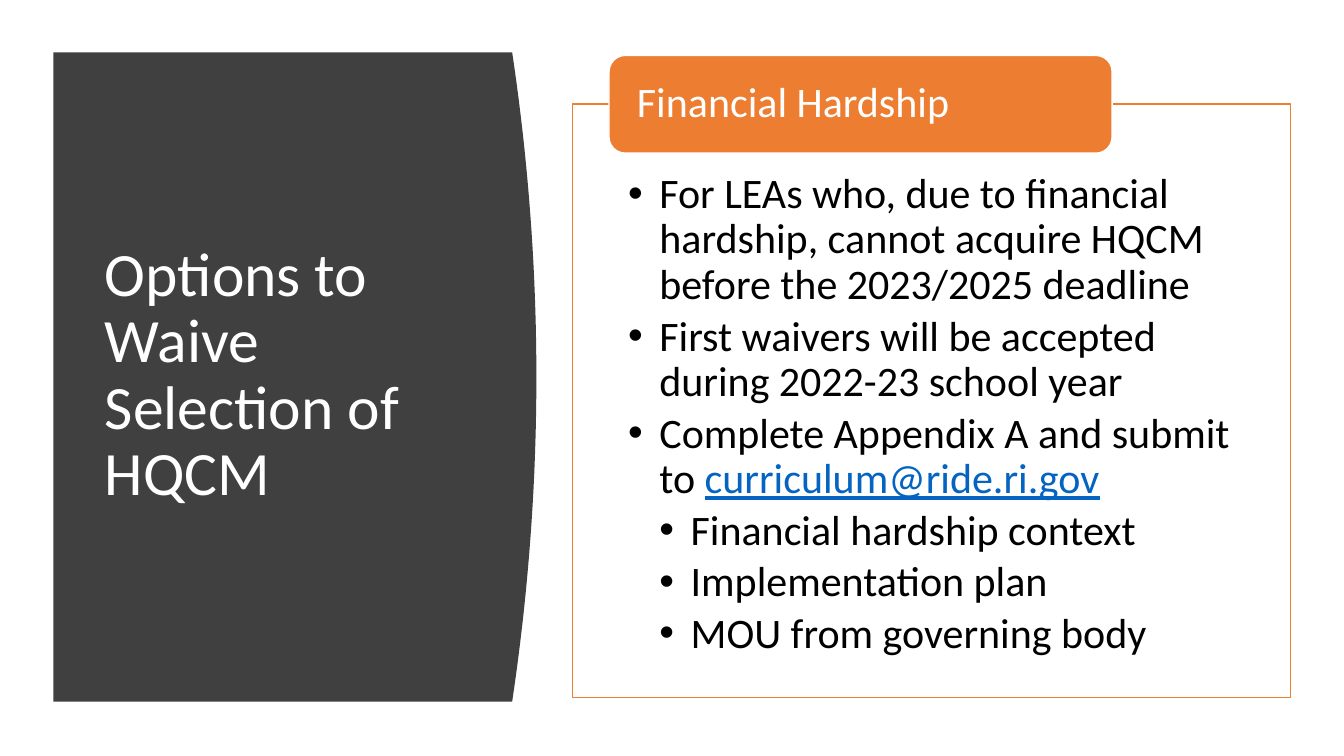
from dataclasses import dataclass

import pptx
import pptx.dml.color
import pptx.enum.shapes
import pptx.enum.text
import pptx.oxml
import pptx.oxml.ns
import pptx.util

PX = 9144
FONT = "Calibri"
COLORS = {
    "white": "FFFFFF",
    "dark": "404040",
    "orange": "ED7D31",
    "black": "000000",
    "link": "0563C1",
}
SHAPES = pptx.enum.shapes.MSO_SHAPE
ANCHOR = pptx.enum.text.MSO_ANCHOR
INDENT = 31


@dataclass(frozen=True)
class Box:
    left: int
    top: int
    width: int
    height: int


@dataclass(frozen=True)
class Run:
    text: str
    color: str = "black"
    underline: bool = False


@dataclass(frozen=True)
class Bullet:
    level: int
    runs: tuple[Run, ...]


PANEL = Box(568, 103, 712, 589)
HEADER = Box(604, 55, 499, 97)
TITLE = Box(94, 111, 374, 524)
CURVE = Box(53, 52, 479, 644)
BULGE = 24
CURVE_STEPS = 40

BULLETS = (
    Bullet(1, (Run("For LEAs who, due to financial hardship, cannot acquire HQCM "
                   "before the 2023/2025 deadline"),)),
    Bullet(1, (Run("First waivers will be accepted during 2022-23 school year"),)),
    Bullet(1, (Run("Complete Appendix A and submit to "),
               Run("curriculum@ride.ri.gov", "link", True))),
    Bullet(2, (Run("Financial hardship context"),)),
    Bullet(2, (Run("Implementation plan"),)),
    Bullet(2, (Run("MOU from governing body"),)),
)


def rgb(name: str) -> pptx.dml.color.RGBColor:
    return pptx.dml.color.RGBColor.from_string(COLORS[name])


def paint(sp, fill: str, line: str | None = None) -> None:
    sp.shadow.inherit = False
    sp.fill.solid()
    sp.fill.fore_color.rgb = rgb(fill)
    if line:
        sp.line.color.rgb = rgb(line)
        sp.line.width = pptx.util.Pt(1)
    else:
        sp.line.fill.background()


def add_box(slide, kind, box: Box, fill: str, line: str):
    sp = slide.shapes.add_shape(kind, box.left * PX, box.top * PX,
                                box.width * PX, box.height * PX)
    paint(sp, fill, line)
    return sp


def set_frame(tf, margins: tuple[int, int, int, int], anchor) -> None:
    tf.word_wrap = True
    tf.auto_size = pptx.enum.text.MSO_AUTO_SIZE.NONE
    tf.vertical_anchor = anchor
    tf.margin_left, tf.margin_top, tf.margin_right, tf.margin_bottom = (
        m * PX for m in margins)


def add_runs(p, runs: tuple[Run, ...], size: int) -> None:
    p.alignment = pptx.enum.text.PP_ALIGN.LEFT
    p.line_spacing = 0.9
    for run in runs:
        r = p.add_run()
        r.text = run.text
        r.font.name = FONT
        r.font.size = pptx.util.Pt(size)
        r.font.color.rgb = rgb(run.color)
        if run.underline:
            r.font.underline = True


def set_bullet(p, level: int) -> None:
    pPr = p._p.get_or_add_pPr()
    pPr.set("marL", str(level * INDENT * PX))
    pPr.set("indent", str(-INDENT * PX))
    ns = pptx.oxml.ns.nsdecls("a")
    pPr.append(pptx.oxml.parse_xml(f'<a:buFont {ns} typeface="Arial"/>'))
    pPr.append(pptx.oxml.parse_xml(f'<a:buChar {ns} char="•"/>'))


def add_curve(slide) -> None:
    edge = CURVE.left + CURVE.width
    points = []
    for i in range(CURVE_STEPS + 1):
        t = i / CURVE_STEPS
        x = edge - BULGE * (2 * t - 1) ** 2
        points.append((round(x * PX), round((CURVE.top + t * CURVE.height) * PX)))
    points.append((CURVE.left * PX, (CURVE.top + CURVE.height) * PX))
    builder = slide.shapes.build_freeform(CURVE.left * PX, CURVE.top * PX)
    builder.add_line_segments(points, close=True)
    sp = builder.convert_to_shape()
    paint(sp, "dark")
    slide.shapes._spTree.insert(2, sp._element)


def add_title(slide) -> None:
    sp = slide.shapes.title
    sp.left, sp.top = TITLE.left * PX, TITLE.top * PX
    sp.width, sp.height = TITLE.width * PX, TITLE.height * PX
    set_frame(sp.text_frame, (10, 5, 10, 5), ANCHOR.MIDDLE)
    add_runs(sp.text_frame.paragraphs[0],
             (Run("Options to Waive Selection of HQCM", "white"),), 44)


def add_panel(slide) -> None:
    sp = add_box(slide, SHAPES.RECTANGLE, PANEL, "white", "orange")
    color = sp._element.spPr.find(".//" + pptx.oxml.ns.qn("a:srgbClr"))
    ns = pptx.oxml.ns.nsdecls("a")
    color.append(pptx.oxml.parse_xml(f'<a:alpha {ns} val="90000"/>'))
    tf = sp.text_frame
    set_frame(tf, (55, 68, 55, 23), ANCHOR.TOP)
    for i, bullet in enumerate(BULLETS):
        p = tf.paragraphs[0] if i == 0 else tf.add_paragraph()
        p.level = bullet.level
        set_bullet(p, bullet.level)
        p.space_after = pptx.util.Pt(4.5)
        add_runs(p, bullet.runs, 30)


def add_header(slide) -> None:
    sp = add_box(slide, SHAPES.ROUNDED_RECTANGLE, HEADER, "orange", "white")
    set_frame(sp.text_frame, (23, 0, 23, 0), ANCHOR.MIDDLE)
    add_runs(sp.text_frame.paragraphs[0], (Run("Financial Hardship", "white"),), 30)


def main() -> None:
    prs = pptx.Presentation()
    prs.slide_width, prs.slide_height = 1333 * PX, 750 * PX
    slide = prs.slides.add_slide(prs.slide_layouts[5])
    add_curve(slide)
    add_title(slide)
    add_panel(slide)
    add_header(slide)
    prs.save("out.pptx")


if __name__ == "__main__":
    main()
